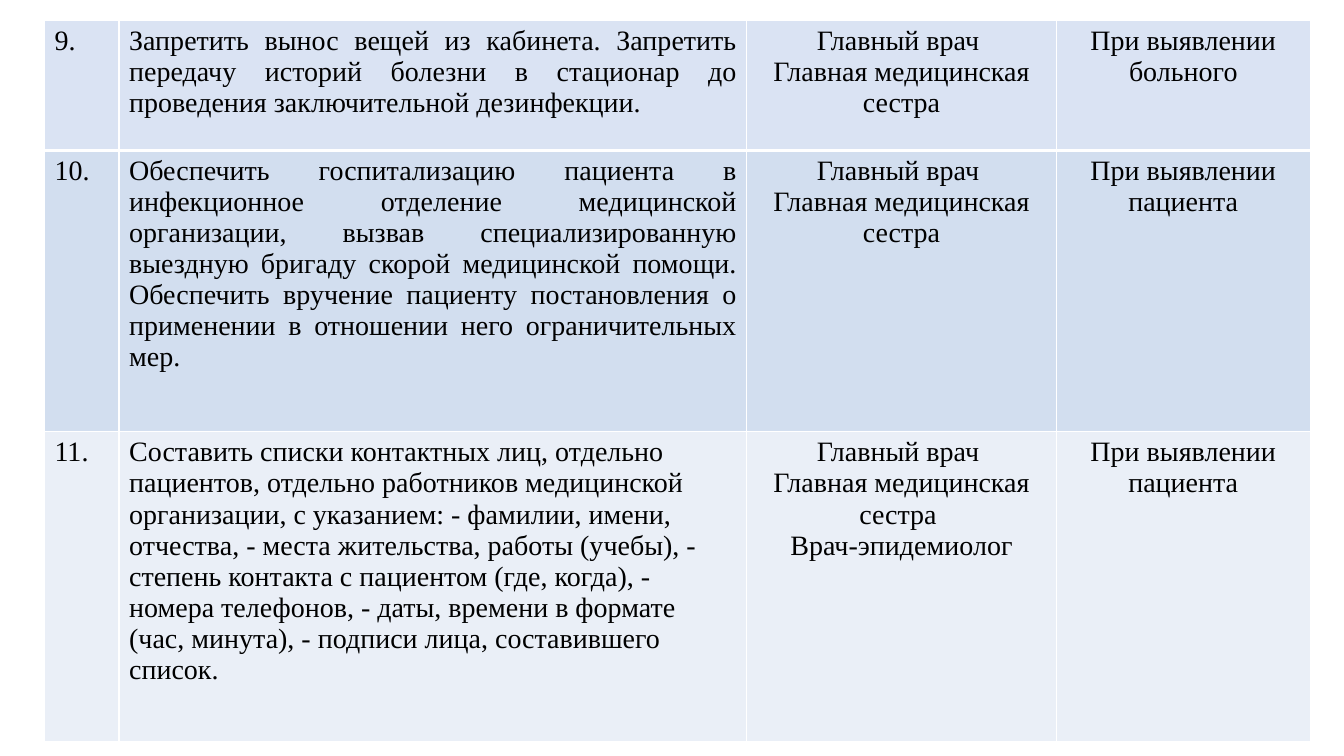
from lxml.etree import SubElement
from pptx import Presentation
from pptx.dml.color import RGBColor
from pptx.enum.text import PP_ALIGN
from pptx.oxml.ns import qn
from pptx.util import Cm, Pt

# Content: number, measure, who is in charge, when
MEASURES = [
    ("9.",
     "Запретить вынос вещей из кабинета. Запретить передачу историй болезни "
     "в стационар до проведения заключительной дезинфекции.",
     "Главный врач \nГлавная медицинская сестра",
     "При выявлении больного"),
    ("10.",
     "Обеспечить госпитализацию пациента в инфекционное отделение медицинской "
     "организации, вызвав специализированную выездную бригаду скорой медицинской "
     "помощи. Обеспечить вручение пациенту постановления о применении в отношении "
     "него ограничительных мер.",
     "Главный врач \nГлавная медицинская сестра",
     "При выявлении пациента"),
    ("11.",
     "Составить списки контактных лиц, отдельно пациентов, отдельно работников "
     "медицинской организации, с указанием: - фамилии, имени, отчества, - места "
     "жительства, работы (учебы), - степень контакта с пациентом (где, когда), "
     "- номера телефонов, - даты, времени в формате (час, минута), - подписи лица, "
     "составившего список.",
     "Главный врач \nГлавная медицинская сестра \nВрач-эпидемиолог",
     "При выявлении пациента"),
]
LEFT, TOP = 1.12, 0.51
WIDTHS = [1.88, 15.82, 7.8, 6.4]
HEIGHTS = [3.28, 7.09, 7.8]

THEME = {
    "font": "Times New Roman",
    "size": Pt(20),
    "text": "000000",
    "line": "FFFFFF",
    "rows": ["DAE3F3", "D2DEEF", "EAEFF7"],
}


def align(row, col):
    if col > 1:
        return PP_ALIGN.CENTER
    # The long last measure is set ragged
    justified = col == 1 and row < len(MEASURES) - 1
    return PP_ALIGN.JUSTIFY if justified else PP_ALIGN.LEFT


def border(cell, row):
    props = cell._tc.get_or_add_tcPr()
    for side in "LRTB":
        width = Pt(3) if row == 0 and side == "B" else Pt(1)
        line = SubElement(props, qn("a:ln" + side), w=str(width))
        fill = SubElement(line, qn("a:solidFill"))
        SubElement(fill, qn("a:srgbClr"), val=THEME["line"])


def style(cell, row, col):
    border(cell, row)
    cell.fill.solid()
    cell.fill.fore_color.rgb = RGBColor.from_string(THEME["rows"][row])
    for para in cell.text_frame.paragraphs:
        para.alignment = align(row, col)
        para.font.name = THEME["font"]
        para.font.size = THEME["size"]
        para.font.color.rgb = RGBColor.from_string(THEME["text"])


def main():
    deck = Presentation()
    deck.slide_width, deck.slide_height = Cm(33.87), Cm(19.05)
    slide = deck.slides.add_slide(deck.slide_layouts[6])

    # Table of measures
    table = slide.shapes.add_table(
        len(HEIGHTS), len(WIDTHS), Cm(LEFT), Cm(TOP),
        Cm(sum(WIDTHS)), Cm(sum(HEIGHTS))).table
    table.first_row = False
    table.horz_banding = False
    for column, width in zip(table.columns, WIDTHS):
        column.width = Cm(width)
    for band, height in zip(table.rows, HEIGHTS):
        band.height = Cm(height)

    # Cell text and look
    for row, texts in enumerate(MEASURES):
        for col, text in enumerate(texts):
            cell = table.cell(row, col)
            cell.text = text
            style(cell, row, col)

    deck.save("out.pptx")


if __name__ == "__main__":
    main()
